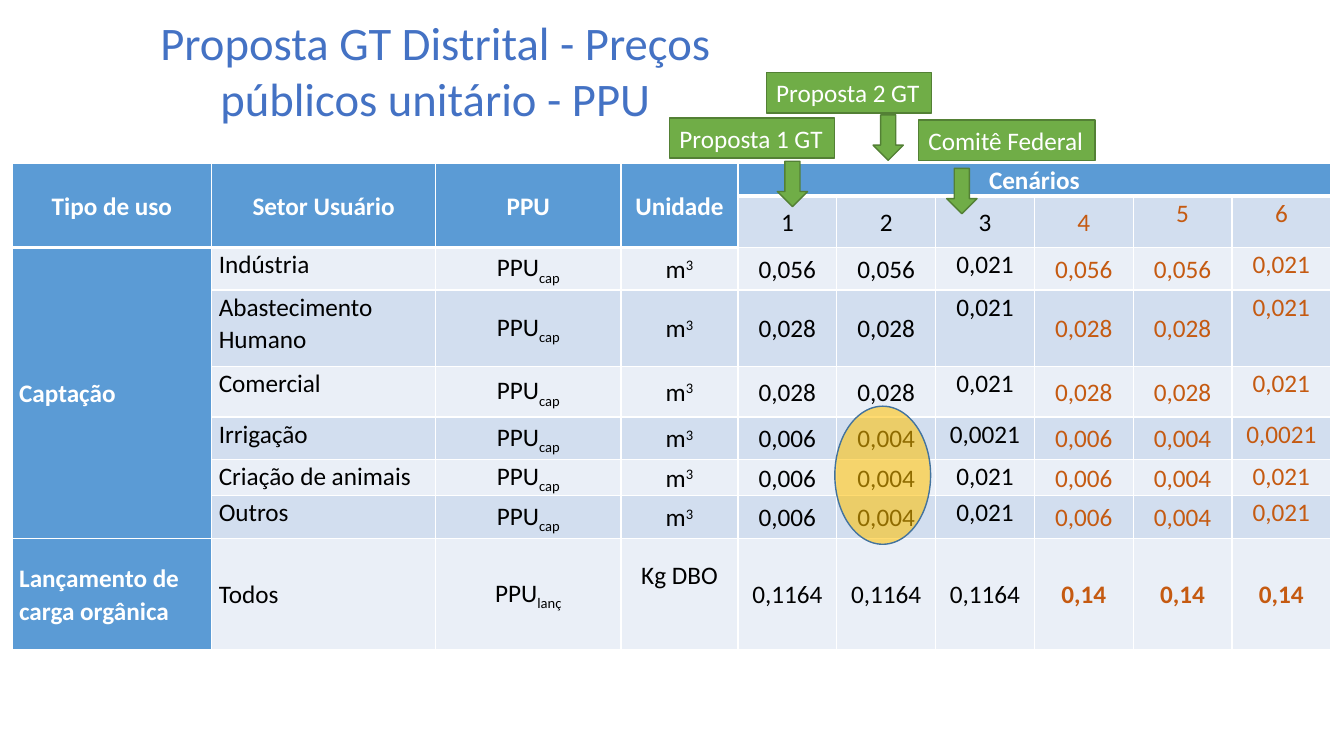
"""Build the slide of proposed unit public prices (PPU) by water use and scenario."""
from dataclasses import dataclass

from lxml import etree
from pptx import Presentation
from pptx import util as u
from pptx.dml.color import RGBColor
from pptx.enum import shapes, text
from pptx.oxml.ns import qn


@dataclass(frozen=True)
class Theme:
    font: str = "Calibri"
    title_size: float = 33.3
    body_size: float = 18
    title: str = "4472C4"
    header: str = "5B9BD5"
    bands: tuple = ("EAEFF7", "D2DEEF")
    white: str = "FFFFFF"
    black: str = "000000"
    accent: str = "C55A11"
    callout: str = "70AD47"
    callout_line: str = "538035"
    highlight: str = "FFC000"
    highlight_line: str = "43739E"


theme = Theme()


def write(frame, content, size=theme.body_size, color=theme.black, bold=False,
          align=text.PP_ALIGN.CENTER, anchor=text.MSO_ANCHOR.MIDDLE, spacing=1.0,
          suffix="", baseline=0):
    frame.vertical_anchor = anchor
    paragraph = frame.paragraphs[0]
    paragraph.alignment = align
    paragraph.line_spacing = spacing
    for part, offset in ((content, 0), (suffix, baseline)):
        if part:
            run = paragraph.add_run()
            run.text = part
            run.font.name = theme.font
            run.font.size = u.Pt(size)
            run.font.bold = bold
            run.font.color.rgb = RGBColor.from_string(color)
            if offset:
                run.font._element.set("baseline", str(offset * 1000))


def add_filled(slide, kind, box, fill, line):
    shape = slide.shapes.add_shape(kind, *map(u.Inches, box))
    shape.shadow.inherit = False
    shape.fill.solid()
    shape.fill.fore_color.rgb = RGBColor.from_string(fill)
    shape.line.color.rgb = RGBColor.from_string(line)
    shape.line.width = u.Pt(1)
    return shape


presentation = Presentation()
presentation.slide_width = u.Inches(13.33)
presentation.slide_height = u.Inches(7.5)
slide = presentation.slides.add_slide(presentation.slide_layouts[5])

title = slide.shapes.title
title.left, title.top, title.width, title.height = map(u.Inches, (1.22, 0.09, 6.2, 1.1))
title.text_frame.word_wrap = True
title.text_frame.auto_size = text.MSO_AUTO_SIZE.NONE
write(title.text_frame, "Proposta GT Distrital - Preços públicos unitário - PPU",
      size=theme.title_size, color=theme.title, anchor=text.MSO_ANCHOR.TOP)

rows = [
    ["Tipo de uso", "Setor Usuário", "PPU", "Unidade", "Cenários"] + [""] * 5,
    [""] * 4 + ["1", "2", "3", "4", "5", "6"],
]
sectors = [
    ("Indústria", "0,056", "0,056", "0,021"),
    ("Abastecimento Humano", "0,028", "0,028", "0,021"),
    ("Comercial", "0,028", "0,028", "0,021"),
    ("Irrigação", "0,006", "0,004", "0,0021"),
    ("Criação de animais", "0,006", "0,004", "0,021"),
    ("Outros", "0,006", "0,004", "0,021"),
]
for sector, *prices in sectors:
    use = "" if len(rows) > 2 else "Captação"
    rows.append([use, sector, "PPU", "m"] + prices * 2)
rows.append(["Lançamento de carga orgânica", "Todos", "PPU", "Kg DBO"]
            + ["0,1164"] * 3 + ["0,14"] * 3)
last = len(rows) - 1

column_widths = [1.98, 2.22, 1.84, 1.16] + [0.98] * 6
row_heights = [0.24, 0.51, 0.42, 0.76, 0.5, 0.42, 0.29, 0.42, 1.11]
table = slide.shapes.add_table(len(rows), len(column_widths), u.Inches(0.12), u.Inches(1.62),
                               u.Inches(sum(column_widths)), u.Inches(sum(row_heights))).table
table.first_row = table.horz_banding = False
for column, width in zip(table.columns, column_widths):
    column.width = u.Inches(width)
for row, height in zip(table.rows, row_heights):
    row.height = u.Inches(height)

for r, row in enumerate(rows):
    for c, content in enumerate(row):
        cell = table.cell(r, c)
        is_header = r == 0 or c == 0 or (r == 1 and c < 4)
        heavy = r == 0 or (r == 1 and c < 4)
        cell.margin_left = cell.margin_right = u.Inches(0.07)
        cell.margin_top = cell.margin_bottom = 0

        properties = cell._tc.get_or_add_tcPr()
        for side in ("lnL", "lnR", "lnT", "lnB"):
            if side == "lnT" and r > 0:
                continue
            width = 3 if heavy and side == "lnB" else 1
            border = etree.SubElement(properties, qn(f"a:{side}"), w=str(u.Pt(width)))
            fill = etree.SubElement(border, qn("a:solidFill"))
            etree.SubElement(fill, qn("a:srgbClr"), val=theme.white)
        cell.fill.solid()
        cell.fill.fore_color.rgb = RGBColor.from_string(
            theme.header if is_header else theme.bands[r % 2])

        if not content:
            continue
        at_top = (1 < r < last and c in (1, 6, 9)) or (r == 1 and c > 7)
        suffix, baseline = "", 0
        if r > 1 and c == 2:
            suffix, baseline = ("lanç" if r == last else "cap"), -25
        elif content == "m":
            suffix, baseline = "3", 30
        write(cell.text_frame, content, spacing=1.07, suffix=suffix, baseline=baseline,
              color=theme.white if is_header else theme.accent if c > 6 else theme.black,
              bold=is_header or (r == last and c > 6),
              align=text.PP_ALIGN.LEFT if r > 1 and c < 2 else text.PP_ALIGN.CENTER)
        cell.vertical_anchor = text.MSO_ANCHOR.TOP if at_top else text.MSO_ANCHOR.MIDDLE

table.cell(last, 3).margin_bottom = u.Inches(0.38)
for c in range(4):
    table.cell(0, c).merge(table.cell(1, c))
table.cell(0, 4).merge(table.cell(0, 9))
table.cell(2, 0).merge(table.cell(last - 1, 0))

callouts = [
    ("Proposta 1 GT", (6.64, 1.17, 1.64, 0.4), (7.71, 1.6)),
    ("Proposta 2 GT", (7.6, 0.72, 1.64, 0.4), (8.66, 1.14)),
    ("Comitê Federal", (9.11, 1.19, 1.75, 0.4), (9.39, 1.67)),
]
for label, box, arrow_corner in callouts:
    callout = add_filled(slide, shapes.MSO_SHAPE.RECTANGLE, box,
                         theme.callout, theme.callout_line)
    callout.text_frame.word_wrap = False
    callout.text_frame.auto_size = text.MSO_AUTO_SIZE.SHAPE_TO_FIT_TEXT
    write(callout.text_frame, label, color=theme.white,
          align=text.PP_ALIGN.LEFT, anchor=text.MSO_ANCHOR.TOP)
    add_filled(slide, shapes.MSO_SHAPE.DOWN_ARROW, (*arrow_corner, 0.3, 0.45),
               theme.callout, theme.callout_line)

highlight = add_filled(slide, shapes.MSO_SHAPE.OVAL, (8.28, 4.03, 0.95, 1.37),
                       theme.highlight, theme.highlight_line)
highlight_color = highlight._element.spPr.find(qn("a:solidFill")).find(qn("a:srgbClr"))
etree.SubElement(highlight_color, qn("a:alpha"), val="56000")

presentation.save("out.pptx")
